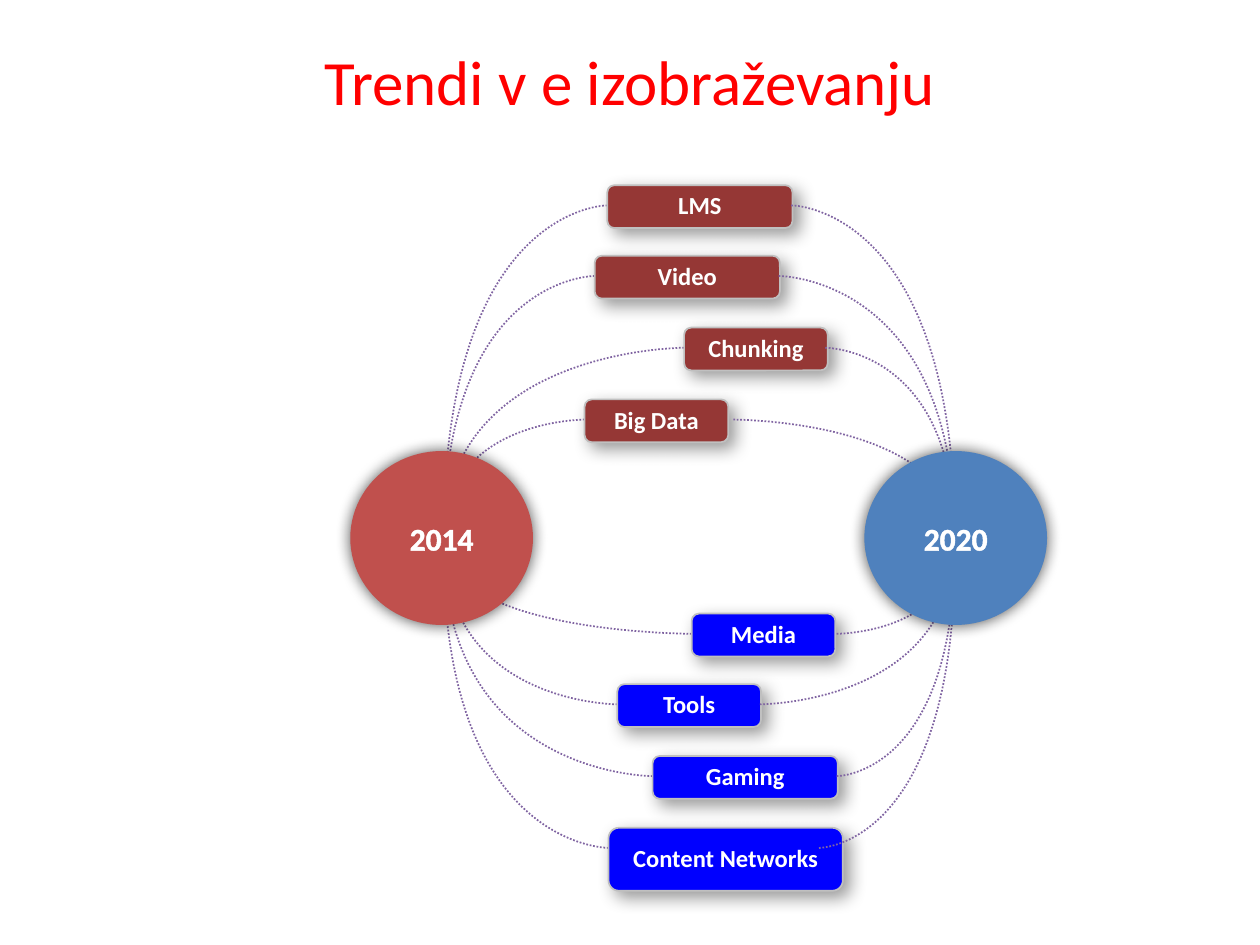
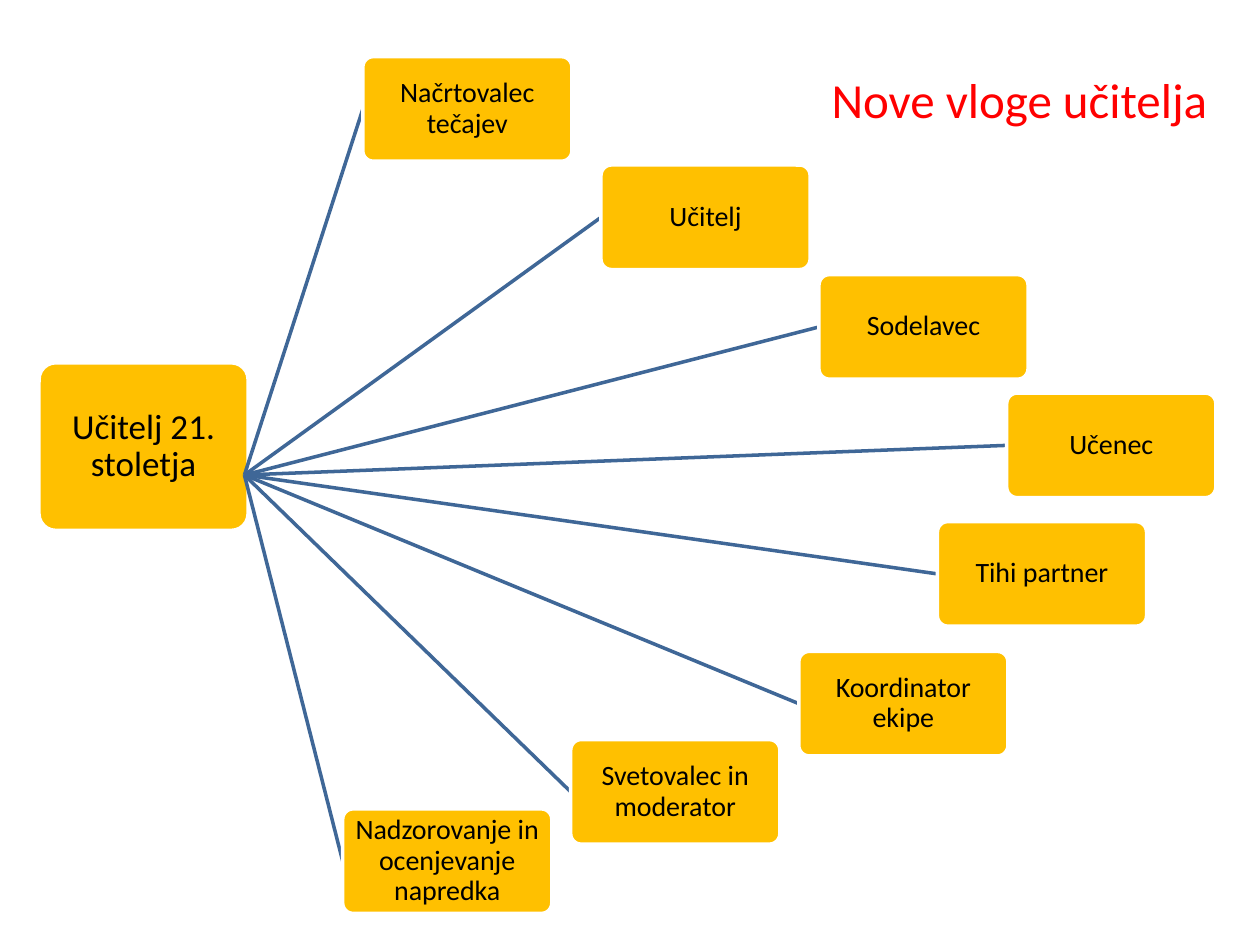
import pptx
import pptx.dml.color
import pptx.enum.dml
import pptx.enum.shapes
import pptx.enum.text
import pptx.oxml
import pptx.oxml.ns
import pptx.util
import lxml.etree
from dataclasses import dataclass

Inches, Pt = pptx.util.Inches, pptx.util.Pt
RGB = pptx.dml.color.RGBColor.from_string
SHAPE = pptx.enum.shapes.MSO_SHAPE
ANCHOR = pptx.enum.text.MSO_ANCHOR
ALIGN = pptx.enum.text.PP_ALIGN
qn = pptx.oxml.ns.qn


@dataclass(frozen=True)
class Theme:
    font: str = "Calibri"
    title: str = "FF0000"
    white: str = "FFFFFF"
    black: str = "000000"
    present: str = "953735"
    future: str = "0000FF"
    border: str = "C0C0C0"
    curve: str = "8064A2"
    start_year: str = "C0504D"
    end_year: str = "4F81BD"
    role: str = "FFC000"
    spoke: str = "3F6797"
    title_size: int = 36
    side_title_size: int = 28
    hub_size: int = 20
    year_size: int = 18
    role_size: int = 16
    trend_size: int = 14


theme = Theme()


def write(shape, text, size, color, bold=False, align=ALIGN.CENTER, inset=None,
          spacing=None, anchor=ANCHOR.MIDDLE, wrap=True):
    frame = shape.text_frame
    frame.text = text
    frame_format = {"word_wrap": wrap, "vertical_anchor": anchor,
                    "auto_size": pptx.enum.text.MSO_AUTO_SIZE.NONE}
    if inset is not None:
        for side in ("left", "top", "right", "bottom"):
            frame_format[f"margin_{side}"] = Inches(inset)
    paragraph = frame.paragraphs[0]
    font = paragraph.runs[0].font
    formats = (
        (frame, frame_format),
        (paragraph, {"alignment": align, "line_spacing": spacing}),
        (font, {"name": theme.font, "size": Pt(size), "bold": bold}),
    )
    for target, values in formats:
        for name, value in values.items():
            setattr(target, name, value)
    font.color.rgb = RGB(color)


def add_box(slide, kind, place, fill, line=None, width=1, shadow=None):
    box = slide.shapes.add_shape(kind, *map(Inches, place))
    box.fill.solid()
    box.fill.fore_color.rgb = RGB(fill)
    if line:
        box.line.color.rgb = RGB(line)
        box.line.width = Pt(width)
    else:
        box.line.fill.background()
    box.shadow.inherit = False
    if shadow:
        alpha, blur, distance, angle = shadow
        effects = box._element.spPr.find(qn("a:effectLst"))
        outer = lxml.etree.SubElement(
            effects, qn("a:outerShdw"), blurRad=str(Pt(blur)), dist=str(Pt(distance)),
            dir=str(angle * 60000), algn="ctr", rotWithShape="0")
        shade = lxml.etree.SubElement(outer, qn("a:srgbClr"), val=theme.black)
        lxml.etree.SubElement(shade, qn("a:alpha"), val=str(alpha * 1000))
    return box


deck = pptx.Presentation()
deck.slide_width, deck.slide_height = Inches(10), Inches(7.5)

# Titles
titles = (
    ("Trendi v e izobraževanju", (0.5, 0.3, 9, 0.67), theme.title_size,
     {}),
    ("Nove vloge učitelja", (6.5, 0.5, 3.21, 0.57), theme.side_title_size,
     {"align": ALIGN.LEFT, "anchor": ANCHOR.TOP, "wrap": False}),
)
slides = []
for text, place, size, options in titles:
    slide = deck.slides.add_slide(deck.slide_layouts[5])
    title = slide.shapes.title
    for name, value in zip(("left", "top", "width", "height"), place):
        setattr(title, name, Inches(value))
    write(title, text, size, theme.title, **options)
    slides.append(slide)
trends_slide, roles_slide = slides

# Trends: text, box, right end of the box as met by its curve, height of the curve's foot
trends = (
    ("LMS", (4.82, 1.47, 1.47, 0.34), 6.28, 4.28),
    ("Video", (4.72, 2.03, 1.47, 0.34), 6.18, 4.28),
    ("Chunking", (5.43, 2.6, 1.14, 0.34), 6.55, 4.28),
    ("Big Data", (4.64, 3.17, 1.14, 0.34), 5.82, 4.28),
    ("Media", (5.49, 4.87, 1.14, 0.34), 6.64, 4.28),
    ("Tools", (4.9, 5.43, 1.14, 0.34), 6.03, 4.28),
    ("Gaming", (5.18, 6, 1.47, 0.34), 6.64, 4.32),
    ("Content Networks", (4.83, 6.57, 1.86, 0.5), 6.5, 4.36),
)
years = (
    ("2014", 2.78, theme.start_year, 3.52),
    ("2020", 6.86, theme.end_year, 7.58),
)
for year, year_left, year_color, foot_x in years:
    # Dotted curves from the trends to the year
    for _, (left, top, _, _), right, foot_y in trends:
        start_x = left if year == "2014" else right
        start_y = top + 0.16
        builder = trends_slide.shapes.build_freeform(Inches(start_x), Inches(start_y))
        builder.add_line_segments(
            [(Inches(foot_x), Inches(start_y)), (Inches(foot_x), Inches(foot_y))], close=False)
        curve = builder.convert_to_shape()
        curve.fill.background()
        curve.line.color.rgb = RGB(theme.curve)
        curve.line.width = Pt(1)
        curve.line.dash_style = pptx.enum.dml.MSO_LINE.ROUND_DOT
        curve.shadow.inherit = False
        # Turn the corner into the control point of one Bezier segment
        outline = curve._element.xpath(".//a:path")[0]
        start, corner, foot = [
            (point.get("x"), point.get("y")) for point in outline.iter(qn("a:pt"))]
        for segment in outline.findall(qn("a:lnTo")):
            outline.remove(segment)
        bezier = lxml.etree.SubElement(outline, qn("a:cubicBezTo"))
        for x, y in (start, corner, foot):
            lxml.etree.SubElement(bezier, qn("a:pt"), x=x, y=y)

    # Trend boxes lie between the two sets of curves
    if year == "2014":
        for index, (text, place, _, _) in enumerate(trends):
            fill = theme.present if index < 4 else theme.future
            box = add_box(trends_slide, SHAPE.ROUNDED_RECTANGLE, place, fill,
                          theme.border, shadow=(40, 10, 5, 45))
            write(box, text, theme.trend_size, theme.white, bold=True, inset=0, spacing=0.95)

    # Year circle with outlined digits
    circle = add_box(trends_slide, SHAPE.OVAL, (year_left, 3.58, 1.45, 1.38), year_color,
                     shadow=(67, 9, 0, 0))
    write(circle, year, theme.year_size, theme.white, bold=True, wrap=False)
    digits = circle.text_frame.paragraphs[0].runs[0].font._element
    edge = lxml.etree.Element(qn("a:ln"), w=str(Pt(0.5)))
    edge_fill = lxml.etree.SubElement(edge, qn("a:solidFill"))
    lxml.etree.SubElement(edge_fill, qn("a:srgbClr"), val=theme.white)
    digits.insert(0, edge)

# Teacher hub
hub = add_box(roles_slide, SHAPE.ROUNDED_RECTANGLE, (0.31, 2.88, 1.66, 1.33),
              theme.role, theme.white, 2)
hub.adjustments[0] = 0.1
write(hub, "Učitelj 21. stoletja", theme.hub_size, theme.black, inset=0.06, spacing=0.9)

# Roles, each with a spoke from the hub
roles = (
    ("Načrtovalec tečajev", 2.88, 0.45),
    ("Učitelj", 4.77, 1.31),
    ("Sodelavec", 6.5, 2.18),
    ("Učenec", 7.99, 3.12),
    ("Tihi partner", 7.44, 4.14),
    ("Koordinator ekipe", 6.34, 5.17),
    ("Svetovalec in moderator", 4.53, 5.87),
    ("Nadzorovanje in ocenjevanje napredka", 2.72, 6.42),
)
for text, left, top in roles:
    spoke = roles_slide.shapes.add_connector(
        pptx.enum.shapes.MSO_CONNECTOR.STRAIGHT,
        *map(Inches, (1.94, 3.77, left, top + 0.41)))
    spoke.line.color.rgb = RGB(theme.spoke)
    spoke.line.width = Pt(2)
    lxml.etree.SubElement(spoke._element.spPr, qn("a:effectLst"))
    role = add_box(roles_slide, SHAPE.ROUNDED_RECTANGLE, (left, top, 1.66, 0.83),
                   theme.role, theme.white, 2)
    role.adjustments[0] = 0.1
    write(role, text, theme.role_size, theme.black, inset=0.04, spacing=0.9)
    spoke.end_connect(role, 1)

deck.save("out.pptx")
